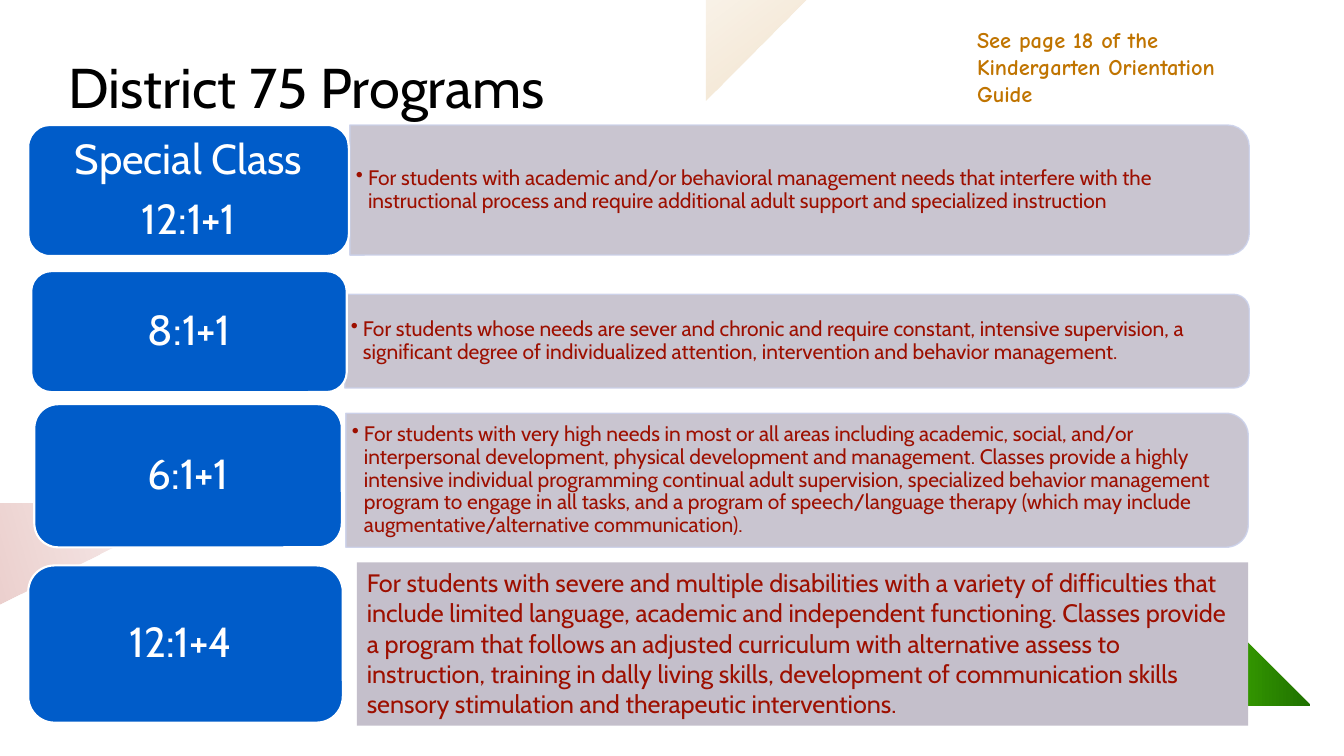
from lxml import etree
from pptx import Presentation
from pptx.dml.color import RGBColor
from pptx.enum.shapes import MSO_SHAPE
from pptx.enum.text import MSO_ANCHOR, MSO_AUTO_SIZE, PP_ALIGN
from pptx.oxml import parse_xml
from pptx.oxml.ns import nsdecls, qn
from pptx.util import Inches, Pt

ROUND, RECT = MSO_SHAPE.ROUNDED_RECTANGLE, MSO_SHAPE.RECTANGLE
TAB = MSO_SHAPE.ROUND_2_SAME_RECTANGLE
MIDDLE, TOP = MSO_ANCHOR.MIDDLE, MSO_ANCHOR.TOP
LEFT, CENTER = PP_ALIGN.LEFT, PP_ALIGN.CENTER
NO_FIT = MSO_AUTO_SIZE.NONE
BLACK = RGBColor(0x00, 0x00, 0x00)
WHITE = RGBColor(0xFF, 0xFF, 0xFF)
BLUE = RGBColor(0x00, 0x5C, 0xC9)
GRAY = RGBColor(0xC4, 0xBF, 0xCB)
PALE = RGBColor(0xCC, 0xD2, 0xEB)
RED = RGBColor(0x9D, 0x0F, 0x00)
GOLD = RGBColor(0xC0, 0x74, 0x00)
LIME = RGBColor(0x3D, 0xA8, 0x00)
GREEN = RGBColor(0x1F, 0x71, 0x00)

deck = Presentation()
deck.slide_width, deck.slide_height = Inches(13.33), Inches(7.5)
slide = deck.slides.add_slide(deck.slide_layouts[5])
shapes = slide.shapes


def write(frame, lines, size, color, font="Cabin", align=LEFT, anchor=MIDDLE,
          pad=(0.1, 0.05, 0.1, 0.05), ratio=None, after=None, bold=False):
    frame.word_wrap = True
    frame.auto_size = NO_FIT
    frame.vertical_anchor = anchor
    (frame.margin_left, frame.margin_top,
     frame.margin_right, frame.margin_bottom) = [Inches(n) for n in pad]
    for i, line in enumerate(lines):
        para = frame.paragraphs[0] if i == 0 else frame.add_paragraph()
        para.alignment = align
        para.line_spacing = ratio
        para.space_after = after
        run = para.add_run()
        run.text = line
        run.font.size, run.font.name = Pt(size), font
        run.font.color.rgb, run.font.bold = color, bold


def block(kind, x, y, w, h, color, edge=None, width=1):
    item = shapes.add_shape(kind, Inches(x), Inches(y), Inches(w), Inches(h))
    item.shadow.inherit = False
    item.fill.solid()
    item.fill.fore_color.rgb = color
    if edge is None:
        item.line.fill.background()
    else:
        item.line.color.rgb = edge
        item.line.width = Pt(width)
    return item


BEAMS = [
    ([(12.02, 7.13), (12.45, 7.17), (12.9, 7.24), (13.33, 7.35), (13.33, 6.68),
      (12.9, 6.58), (12.5, 6.53), (12.24, 6.52)], 0, (3, LIME, 6), (100, LIME, 50)),
    ([(13.33, 6.62), (12.22, 6.22), (12, 6.83), (13.33, 7.31)],
     0, (3, LIME, 100), (100, GREEN, 100)),
    ([(7.79, 0), (7.31, 0), (6.85, 0.53), (6.5, 1.23), (7.16, 0.74)],
     53, (0, GOLD, 5), (100, GOLD, 20)),
    ([(2.24, 5.05), (1.42, 5.05), (0, 5.36), (0, 5.73), (1.53, 5.41)],
     164, (0, RED, 5), (100, RED, 20)),
]
for points, angle, *stops in BEAMS:
    pen = shapes.build_freeform(*points[0], scale=Inches(1))
    pen.add_line_segments(points[1:])
    beam = pen.convert_to_shape()
    beam.shadow.inherit = False
    beam.line.fill.background()
    marks = "".join(
        f'<a:gs pos="{pos * 1000}"><a:srgbClr val="{color}">'
        f'<a:alpha val="{alpha * 1000}"/></a:srgbClr></a:gs>'
        for pos, color, alpha in stops)
    beam.element.spPr.find(qn("a:custGeom")).addnext(parse_xml(
        f'<a:gradFill {nsdecls("a")} rotWithShape="1"><a:gsLst>{marks}</a:gsLst>'
        f'<a:lin ang="{angle * 60000}" scaled="0"/></a:gradFill>'))

title = shapes.title
title.left, title.top = Inches(0.58), Inches(0.47)
title.width, title.height = Inches(5.06), Inches(0.77)
write(title.text_frame, ["District 75 Programs"], 40, BLACK, anchor=TOP)
title.text_frame.word_wrap = False

ROWS = [
    (["Special Class", "12:1+1"], (0.28, 1.24, 3.18, 1.3), (3.47, 1.24, 8.92, 1.29),
     "For students with academic and/or behavioral management needs that interfere with the "
     "instructional process and require additional adult support and specialized instruction"),
    (["8:1+1"], (0.31, 2.69, 3.13, 1.2), (3.42, 2.92, 8.97, 0.93),
     "For students whose needs are sever and chronic and require constant, intensive supervision, a "
     "significant degree of individualized attention, intervention and behavior management."),
    (["6:1+1"], (0.34, 4.01, 3.05, 1.42), (3.43, 4.1, 8.95, 1.33),
     "For students with very high needs in most or all areas including academic, social, and/or "
     "interpersonal development, physical development and management. Classes provide a highly "
     "intensive individual programming continual adult supervision, specialized behavior management "
     "program to engage in all tasks, and a program of speech/language therapy (which may include "
     "augmentative/alternative communication)."),
    (["12:1+4 "], (0.28, 5.61, 3.12, 1.56), (3.54, 5.58, 8.84, 1.62),
     "For students with severe and multiple disabilities with a variety of difficulties that "
     "include limited language, academic and independent functioning. Classes provide a program "
     "that follows an adjusted curriculum with alternative assess to instruction, training in "
     "dally living skills, development of communication skills sensory stimulation and "
     "therapeutic interventions."),
]
for row, (label, card, (x, y, w, h), text) in enumerate(ROWS):
    if row < 3:
        panel = block(TAB, x + (w - h) / 2, y + (h - w) / 2, h, w, GRAY, PALE)
        panel.rotation = 90
        for tint in panel.element.spPr.iter(qn("a:srgbClr")):
            etree.SubElement(tint, qn("a:alpha"), val="90000")
        box = shapes.add_textbox(Inches(x), Inches(y), Inches(w - 0.07), Inches(h))
        write(box.text_frame, [text], 15, RED, pad=(0.06, 0.03, 0.06, 0.03),
              ratio=0.9, after=Pt(2.25))
        props = box.text_frame.paragraphs[0]._p.get_or_add_pPr()
        props.set("marL", str(Inches(0.12)))
        props.set("indent", str(-Inches(0.12)))
        etree.SubElement(props, qn("a:buChar"), char="•")
    else:
        panel = block(RECT, x, y, w, h, GRAY)
        write(panel.text_frame, [text], 18, RED, anchor=TOP)
    badge = block(ROUND, *card, BLUE, WHITE, 1.5)
    write(badge.text_frame, label, 30, WHITE, align=CENTER,
          pad=(0.12, 0.06, 0.12, 0.06), ratio=0.9, after=Pt(10.5))

note = shapes.add_textbox(Inches(9.69), Inches(0.46), Inches(2.89), Inches(0.4))
write(note.text_frame, ["See page 18 of the Kindergarten Orientation Guide"], 16, GOLD,
      font="Comic Neue", pad=(0, 0.05, 0.1, 0.05), bold=True)

deck.save("out.pptx")
